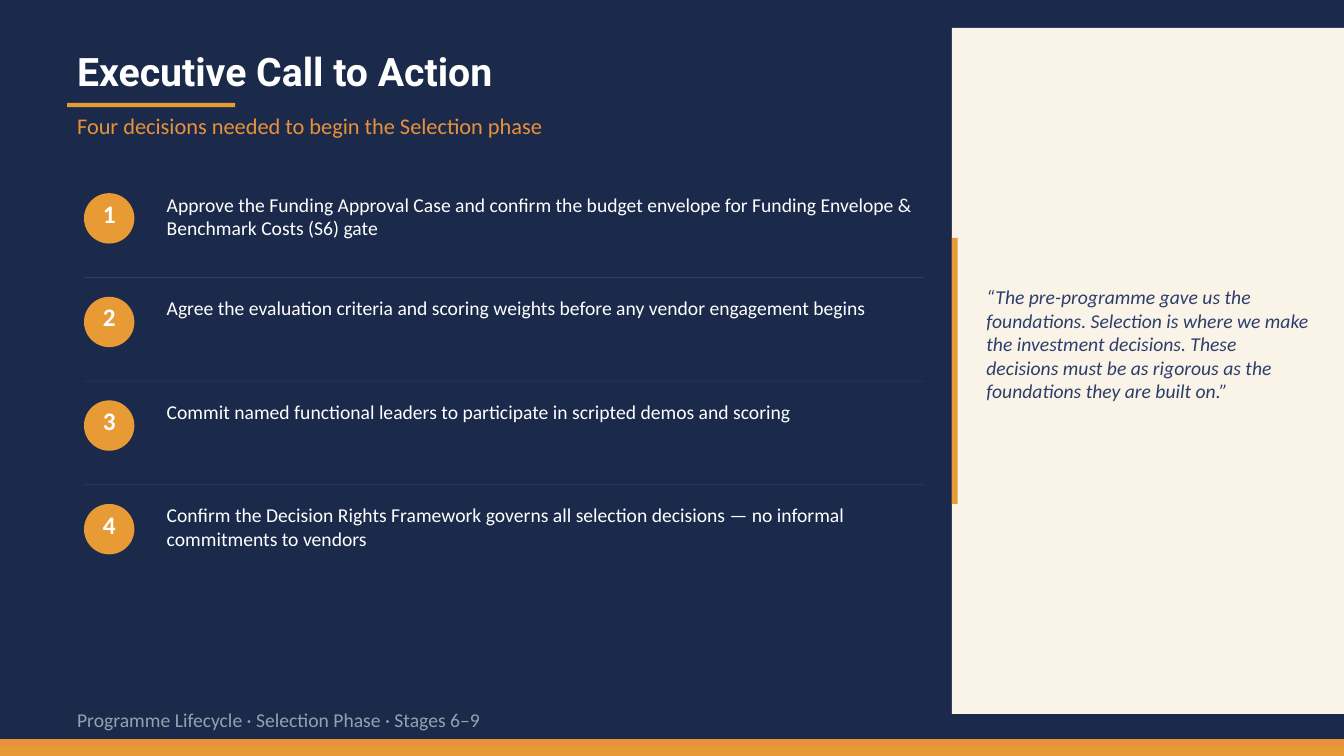
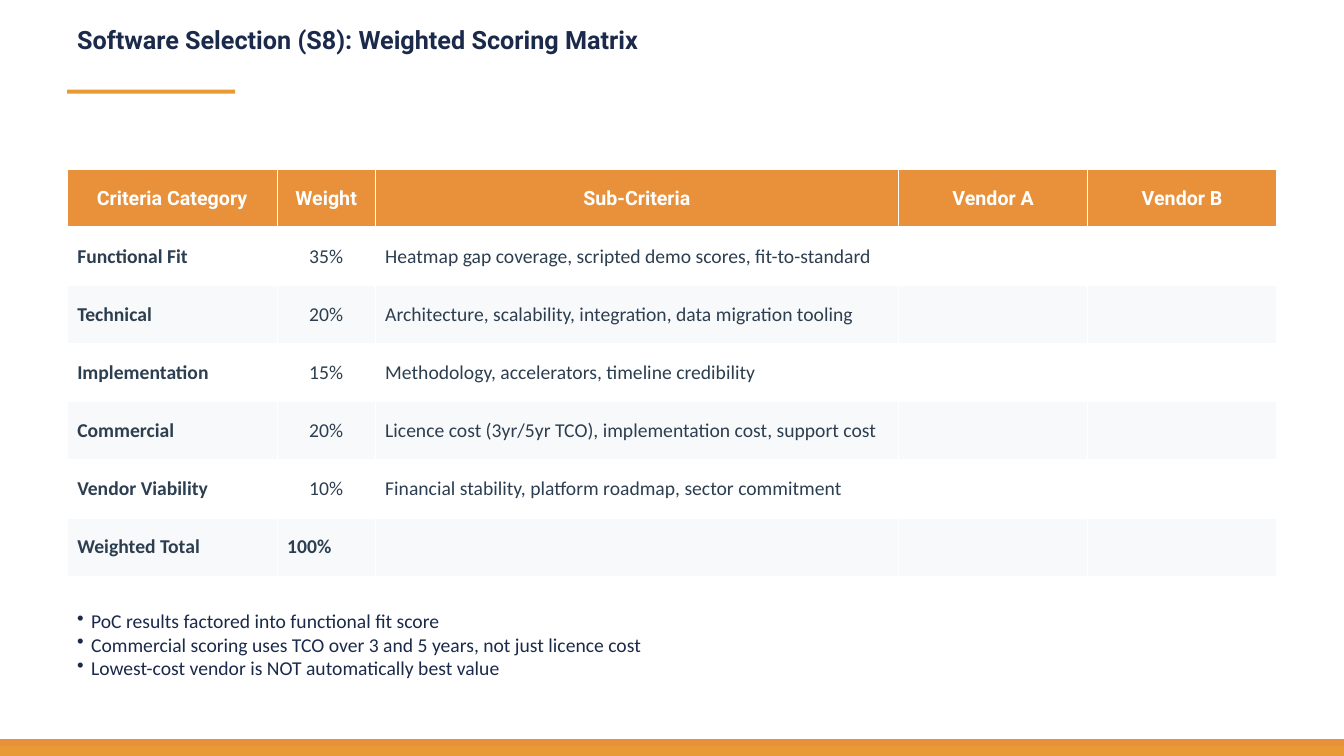
from lxml import etree
from pptx import Presentation
from pptx.dml.color import RGBColor
from pptx.enum.shapes import MSO_SHAPE
from pptx.enum.text import MSO_ANCHOR, MSO_AUTO_SIZE, PP_ALIGN
from pptx.oxml.ns import qn
from pptx.util import Emu, Pt

RECT, OVAL = MSO_SHAPE.RECTANGLE, MSO_SHAPE.OVAL
LEFT, CENTER = PP_ALIGN.LEFT, PP_ALIGN.CENTER
MIDDLE = MSO_ANCHOR.MIDDLE
GROW = MSO_AUTO_SIZE.SHAPE_TO_FIT_TEXT

PX = 6350
SLIDE_W, SLIDE_H = 1920, 1080
MARGIN = 96

NAVY = RGBColor(0x1B, 0x2A, 0x4A)
INDIGO = RGBColor(0x2C, 0x3E, 0x6B)
SLATE = RGBColor(0x2C, 0x3E, 0x50)
ORANGE = RGBColor(0xE8, 0x91, 0x3A)
AMBER = RGBColor(0xE8, 0x9A, 0x35)
CREAM = RGBColor(0xFA, 0xF3, 0xE8)
MIST = RGBColor(0xF8, 0xF9, 0xFA)
GREY = RGBColor(0x90, 0xA4, 0xAE)
WHITE = RGBColor(0xFF, 0xFF, 0xFF)

BODY = {"name": "Calibri", "size": Pt(14)}
TITLE = {"name": "Roboto", "bold": True}
NUMBER = {**BODY, "size": Pt(18), "bold": True}

ACTIONS = [
    "Approve the Funding Approval Case and confirm the budget envelope for Funding Envelope & Benchmark Costs (S6) gate",
    "Agree the evaluation criteria and scoring weights before any vendor engagement begins",
    "Commit named functional leaders to participate in scripted demos and scoring",
    "Confirm the Decision Rights Framework governs all selection decisions — no informal commitments to vendors",
]
QUOTE = (
    "“The pre-programme gave us the foundations. Selection is where we make the investment decisions. "
    "These decisions must be as rigorous as the foundations they are built on.”"
)
COLUMNS = [
    ("Criteria Category", 300),
    ("Weight", 140),
    ("Sub-Criteria", 748),
    ("Vendor A", 270),
    ("Vendor B", 270),
]
CRITERIA = [
    ("Functional Fit", "35%", "Heatmap gap coverage, scripted demo scores, fit-to-standard"),
    ("Technical", "20%", "Architecture, scalability, integration, data migration tooling"),
    ("Implementation", "15%", "Methodology, accelerators, timeline credibility"),
    ("Commercial", "20%", "Licence cost (3yr/5yr TCO), implementation cost, support cost"),
    ("Vendor Viability", "10%", "Financial stability, platform roadmap, sector commitment"),
    ("Weighted Total", "100%", ""),
]
NOTES = [
    "PoC results factored into functional fit score",
    "Commercial scoring uses TCO over 3 and 5 years, not just licence cost",
    "Lowest-cost vendor is NOT automatically best value",
]


def emu(*lengths):
    return [Emu(n * PX) for n in lengths]


def add_block(s, box, color, kind=RECT):
    sp = s.shapes.add_shape(kind, *emu(*box))
    sp.shadow.inherit = False
    sp.fill.solid()
    sp.fill.fore_color.rgb = color
    sp.line.fill.background()


def write(p, text, style, color, align=LEFT):
    p.alignment = align
    r = p.add_run()
    r.text = text
    for key, value in style.items():
        setattr(r.font, key, value)
    r.font.color.rgb = color


def add_text(s, box, lines, style, color, align=LEFT, bullet_indent=0):
    tf = s.shapes.add_textbox(*emu(*box)).text_frame
    tf.word_wrap = True
    tf.auto_size = GROW
    for i, line in enumerate(lines):
        p = tf.paragraphs[0] if i == 0 else tf.add_paragraph()
        if bullet_indent:
            pPr = p._p.get_or_add_pPr()
            pPr.set("marL", str(bullet_indent * PX))
            pPr.set("indent", str(-bullet_indent * PX))
            etree.SubElement(pPr, qn("a:buChar")).set("char", "•")
        write(p, line, style, color, align)


def new_slide(prs, background):
    s = prs.slides.add_slide(prs.slide_layouts[6])
    s.background.fill.solid()
    s.background.fill.fore_color.rgb = background
    add_block(s, (0, SLIDE_H - 24, SLIDE_W, 24), ORANGE)
    add_block(s, (0, SLIDE_H - 14, SLIDE_W, 14), AMBER)
    return s


def add_title(s, box, text, size, color, rule_drop):
    x, y, w, h = box
    add_text(s, box, [text], {**TITLE, "size": Pt(size)}, color)
    add_block(s, (x, y + rule_drop, 240, 6), AMBER)


def add_actions(s, box, actions):
    x, y, w, pitch = box
    for i, action in enumerate(actions):
        top = y + i * pitch
        if i:
            add_block(s, (x, top - 28, w, 1), INDIGO)
        add_block(s, (x, top, 72, 72), AMBER, OVAL)
        add_text(s, (x, top, 72, 58), [str(i + 1)], NUMBER, WHITE, CENTER)
        add_text(s, (x + 104, top - 8, w - 88, 48), [action], BODY, WHITE)


def add_quote(s, box, quote):
    x, y, w, h = box
    add_block(s, box, CREAM)
    add_block(s, (x, y + 300, 8, 380), AMBER)
    add_text(s, (x + 35, y + 360, w - 70, 82), [quote], {**BODY, "italic": True}, INDIGO)


def set_borders(cell, widths):
    tcPr = cell._tc.get_or_add_tcPr()
    for i, (side, width) in enumerate(widths.items()):
        ln = etree.Element(qn("a:" + side), w=str(Pt(width)))
        fill = etree.SubElement(ln, qn("a:solidFill"))
        etree.SubElement(fill, qn("a:srgbClr"), val=str(WHITE))
        tcPr.insert(i, ln)


def fill_cell(cell, text, style, color, fill, align, bottom=1):
    cell.fill.solid()
    cell.fill.fore_color.rgb = fill
    cell.vertical_anchor = MIDDLE
    set_borders(cell, {"lnL": 1, "lnR": 1, "lnT": 1, "lnB": bottom})
    if text:
        write(cell.text_frame.paragraphs[0], text, style, color, align)


def add_matrix(s, box):
    table = s.shapes.add_table(len(CRITERIA) + 1, len(COLUMNS), *emu(*box)).table
    for row in table.rows:
        row.height = Emu(box[3] * PX // len(table.rows))
    for c, (name, width) in enumerate(COLUMNS):
        table.columns[c].width = Emu(width * PX)
        fill_cell(table.cell(0, c), name, {**TITLE, "size": Pt(14)}, WHITE, ORANGE, CENTER, 3)
    for i, criterion in enumerate(CRITERIA):
        total = i == len(CRITERIA) - 1
        values = criterion + ("",) * (len(COLUMNS) - len(criterion))
        for c, value in enumerate(values):
            style = {**BODY, "bold": c == 0 or total}
            align = CENTER if c == 1 and not total else LEFT
            fill_cell(table.cell(i + 1, c), value, style, SLATE, MIST if i % 2 else WHITE, align)


def build_call_to_action(prs):
    s = new_slide(prs, NAVY)
    add_title(s, (MARGIN, 60, 1240, 82), "Executive Call to Action", 28, WHITE, 87)
    add_text(s, (MARGIN, 153, 1240, 53), ["Four decisions needed to begin the Selection phase"],
             {**BODY, "size": Pt(16)}, ORANGE)
    add_actions(s, (120, 276, 1200, 148), ACTIONS)
    add_quote(s, (1360, 40, 560, 980), QUOTE)
    add_text(s, (MARGIN, 1004, 1000, 48), ["Programme Lifecycle · Selection Phase · Stages 6–9"], BODY, GREY)


def build_scoring_matrix(prs):
    s = new_slide(prs, WHITE)
    add_title(s, (MARGIN, 28, 1720, 76), "Software Selection (S8): Weighted Scoring Matrix", 18, NAVY, 100)
    add_matrix(s, (MARGIN, 242, 1728, 581))
    add_text(s, (MARGIN, 863, 1728, 160), NOTES, BODY, NAVY, bullet_indent=20)


def main():
    prs = Presentation()
    prs.slide_width, prs.slide_height = emu(SLIDE_W, SLIDE_H)
    build_call_to_action(prs)
    build_scoring_matrix(prs)
    prs.save("out.pptx")


if __name__ == "__main__":
    main()
